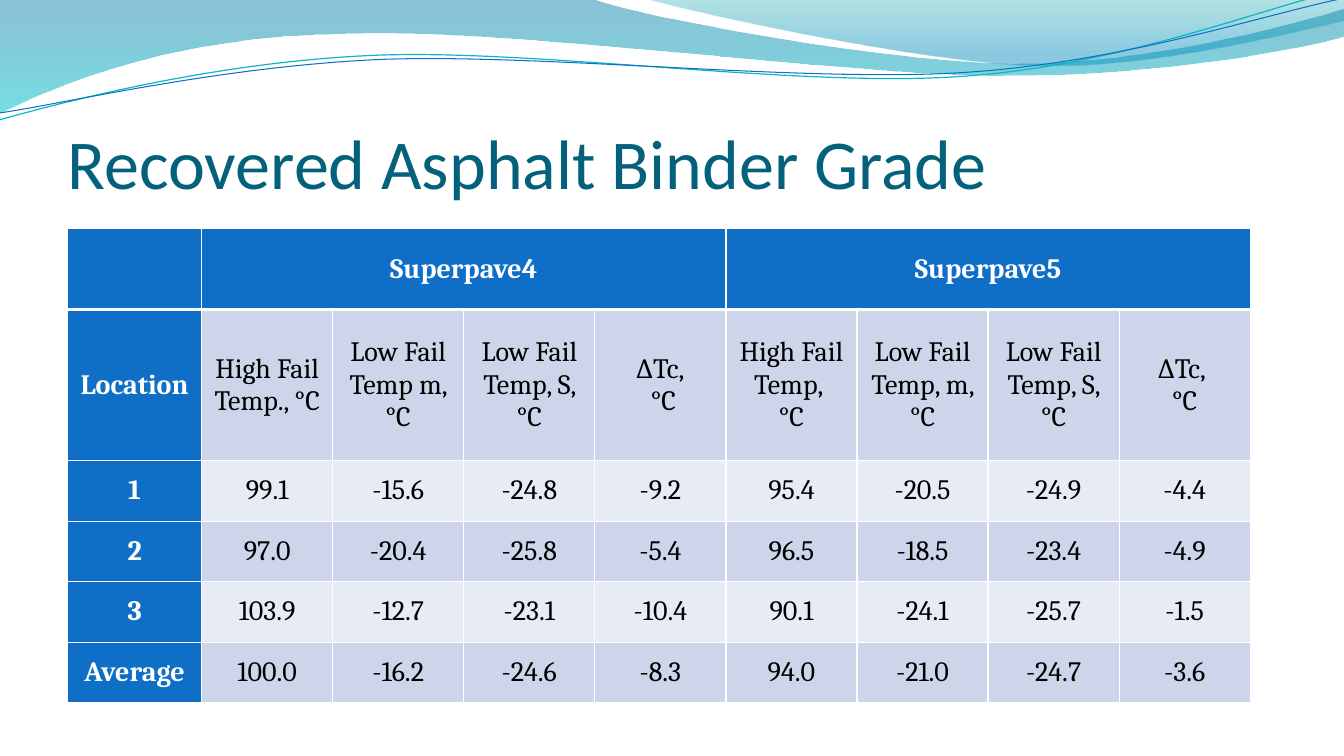
import math
import lxml.etree
import pptx
import pptx.dml.color
import pptx.enum.text
import pptx.oxml.ns
import pptx.util

INCH = pptx.util.Inches(1)
WIDTH, HEIGHT = 13.33, 7.5
MARGIN = 0.67
BLUE, TEAL, WHITE, BLACK = "0F6FC6", "04617B", "FFFFFF", "000000"
BANDS = ["CCD5EA", "E7EBF5"]
TILT = 357.3

BACK_WAVE = [
    [(0, 0)], [(5.87, -0.01)],
    [(6.34, 0.17), (8.85, 0.63), (10.11, 0.63)],
    [(11.38, 0.63), (12.78, 0.26), (13.33, 0.09)], [(13.35, 0.36)],
    [(13.11, 0.44), (11.6, 0.76), (9.94, 0.75)],
    [(8.29, 0.75), (5.09, 0.28), (3.43, 0.34)],
    [(1.72, 0.36), (0.61, 0.83), (-0.01, 1.13)], [(0, 0)],
]
FRONT_WAVE = [
    [(6.39, -0.01)],
    [(6.79, 0.11), (9.09, 0.62), (10.25, 0.65)],
    [(11.41, 0.69), (12.82, 0.32), (13.33, 0.21)], [(13.33, 0)], [(6.39, -0.01)],
]
TEAL_STRAND = [
    [(-0.01, 1.19)],
    [(0.64, 1.01), (2.11, 0.62), (3.69, 0.55)],
    [(5.27, 0.48), (7.9, 0.87), (9.5, 0.76)],
    [(11.1, 0.66), (12.52, 0.08), (13.31, -0.1)],
]
BLUE_STRAND = [
    [(0, 1.12)],
    [(0.63, 1.03), (2.18, 0.66), (3.78, 0.59)],
    [(5.37, 0.53), (7.96, 0.82), (9.55, 0.72)],
    [(11.15, 0.62), (12.55, 0.14), (13.34, -0.02)],
]

COLUMNS = [1.33] + [1.3] * 8
ROWS = [0.8, 1.5] + [0.6] * 4
GROUPS = {1: "Superpave4", 5: "Superpave5"}
GROUP_SIZE = 4
GRADES = [
    ["Location", "High Fail Temp., °C", "Low Fail Temp m, °C", "Low Fail Temp, S, °C", "∆Tc,\n °C",
     "High Fail Temp, \n°C", "Low Fail Temp, m, °C", "Low Fail Temp, S, °C", "∆Tc, \n°C"],
    ["1", "99.1", "-15.6", "-24.8", "-9.2", "95.4", "-20.5", "-24.9", "-4.4"],
    ["2", "97.0", "-20.4", "-25.8", "-5.4", "96.5", "-18.5", "-23.4", "-4.9"],
    ["3", "103.9", "-12.7", "-23.1", "-10.4", "90.1", "-24.1", "-25.7", "-1.5"],
    ["Average", "100.0", "-16.2", "-24.6", "-8.3", "94.0", "-21.0", "-24.7", "-3.6"],
]


def color(code):
    return pptx.dml.color.RGBColor.from_string(code)


def add_xml(parent, tag, **attributes):
    return lxml.etree.SubElement(parent, pptx.oxml.ns.qn(tag), attributes)


def write(frame, text, size, font, ink, bold=False, align="LEFT"):
    para = frame.paragraphs[0]
    para.text = text
    para.alignment = getattr(pptx.enum.text.PP_ALIGN, align)
    for span in para.runs:
        span.font.size = pptx.util.Pt(size)
        span.font.name = font
        span.font.bold = bold
        span.font.color.rgb = color(ink)


def turn(point, degrees, center):
    sine, cosine = math.sin(math.radians(degrees)), math.cos(math.radians(degrees))
    x, y = point[0] - center[0], point[1] - center[1]
    return center[0] + x * cosine - y * sine, center[1] + x * sine + y * cosine


def draw_outline(page, segments, close):
    places = [[(round(x * INCH), round(y * INCH)) for x, y in segment] for segment in segments]
    anchors = [segment[-1] for segment in places]
    builder = page.shapes.build_freeform(*anchors[0], scale=1.0)
    builder.add_line_segments(anchors[1:], close=close)
    shape = builder.convert_to_shape()
    shape.shadow.inherit = False
    strokes = list(shape.element.spPr.iter(pptx.oxml.ns.qn("a:lnTo")))
    for stroke, segment in zip(strokes, places[1:]):
        if len(segment) == 3:
            curve = add_xml(stroke.getparent(), "a:cubicBezTo")
            stroke.getparent().replace(stroke, curve)
            for x, y in segment:
                add_xml(curve, "a:pt", x=str(x - shape.left), y=str(y - shape.top))
    return shape


def draw_wave(page, segments, stops):
    wave = draw_outline(page, segments, True)
    wave.line.fill.background()
    wave.fill.gradient()
    wave.fill.gradient_angle = 270
    for stop, (position, code, opacity) in zip(wave.fill.gradient_stops, stops):
        stop.position = position
        stop.color.rgb = color(code)
    tints = wave.element.spPr.iter(pptx.oxml.ns.qn("a:srgbClr"))
    for tint, (position, code, opacity) in zip(tints, stops):
        add_xml(tint, "a:alpha", val=str(opacity * 1000))


def draw_strand(page, segments, center, code, weight):
    level = [[turn(point, -TILT, center) for point in segment] for segment in segments]
    strand = draw_outline(page, level, False)
    strand.rotation = TILT
    strand.fill.background()
    strand.line.color.rgb = color(code)
    strand.line.width = pptx.util.Pt(weight)


def draw_banner(page):
    draw_wave(page, BACK_WAVE, [(0, "0074A1", 45), (1, "00C6CF", 55)])
    draw_wave(page, FRONT_WAVE, [(0, "00A1A9", 30), (0.8, "008BBF", 45)])
    draw_strand(page, TEAL_STRAND, (6.65, 0.57), "0AB8BF", 0.85)
    draw_strand(page, BLUE_STRAND, (6.67, 0.59), BLUE, 0.75)


def draw_title(page, left, top, width, height):
    box = page.shapes.add_textbox(*map(pptx.util.Inches, (left, top, width, height)))
    frame = box.text_frame
    frame.word_wrap = True
    frame.vertical_anchor = pptx.enum.text.MSO_ANCHOR.BOTTOM
    frame.margin_left = frame.margin_right = frame.margin_bottom = 0
    write(frame, "Recovered Asphalt Binder Grade", 50, "Calibri", TEAL)


def draw_borders(cell, top, bottom):
    properties = cell._tc.get_or_add_tcPr()
    for side, weight in (("L", 1), ("R", 1), ("T", top), ("B", bottom)):
        line = add_xml(properties, "a:ln" + side, w=str(pptx.util.Pt(weight)))
        add_xml(add_xml(line, "a:solidFill"), "a:srgbClr", val=WHITE)


def style_cell(cell, text, row, column):
    heading = row == 0 or column == 0
    draw_borders(cell, 3 if row == 1 else 1, 3 if row == 0 else 1)
    cell.fill.solid()
    cell.fill.fore_color.rgb = color(BLUE if heading else BANDS[(row - 1) % 2])
    cell.vertical_anchor = pptx.enum.text.MSO_ANCHOR.MIDDLE
    cell.margin_left = cell.margin_right = pptx.util.Inches(0.05)
    cell.margin_top = cell.margin_bottom = pptx.util.Inches(0.05)
    write(cell.text_frame, text, 20, "Cambria", WHITE if heading else BLACK, heading, "CENTER")


def draw_grades(page, left, top):
    box = (left, top, sum(COLUMNS), sum(ROWS))
    table = page.shapes.add_table(len(ROWS), len(COLUMNS), *map(pptx.util.Inches, box)).table
    table.horz_banding = False
    for column, width in zip(table.columns, COLUMNS):
        column.width = pptx.util.Inches(width)
    for row, height in zip(table.rows, ROWS):
        row.height = pptx.util.Inches(height)
    header = [GROUPS.get(column, "") for column in range(len(COLUMNS))]
    for row, texts in enumerate([header] + GRADES):
        for column, text in enumerate(texts):
            style_cell(table.cell(row, column), text, row, column)
    for first in GROUPS:
        table.cell(0, first).merge(table.cell(0, first + GROUP_SIZE - 1))


def main():
    deck = pptx.Presentation()
    deck.slide_width = pptx.util.Inches(WIDTH)
    deck.slide_height = pptx.util.Inches(HEIGHT)
    page = deck.slides.add_slide(deck.slide_layouts[6])
    draw_banner(page)
    draw_title(page, MARGIN, 0.77, WIDTH * 0.9, HEIGHT / 6)
    draw_grades(page, MARGIN, 2.27)
    deck.save("out.pptx")


if __name__ == "__main__":
    main()
